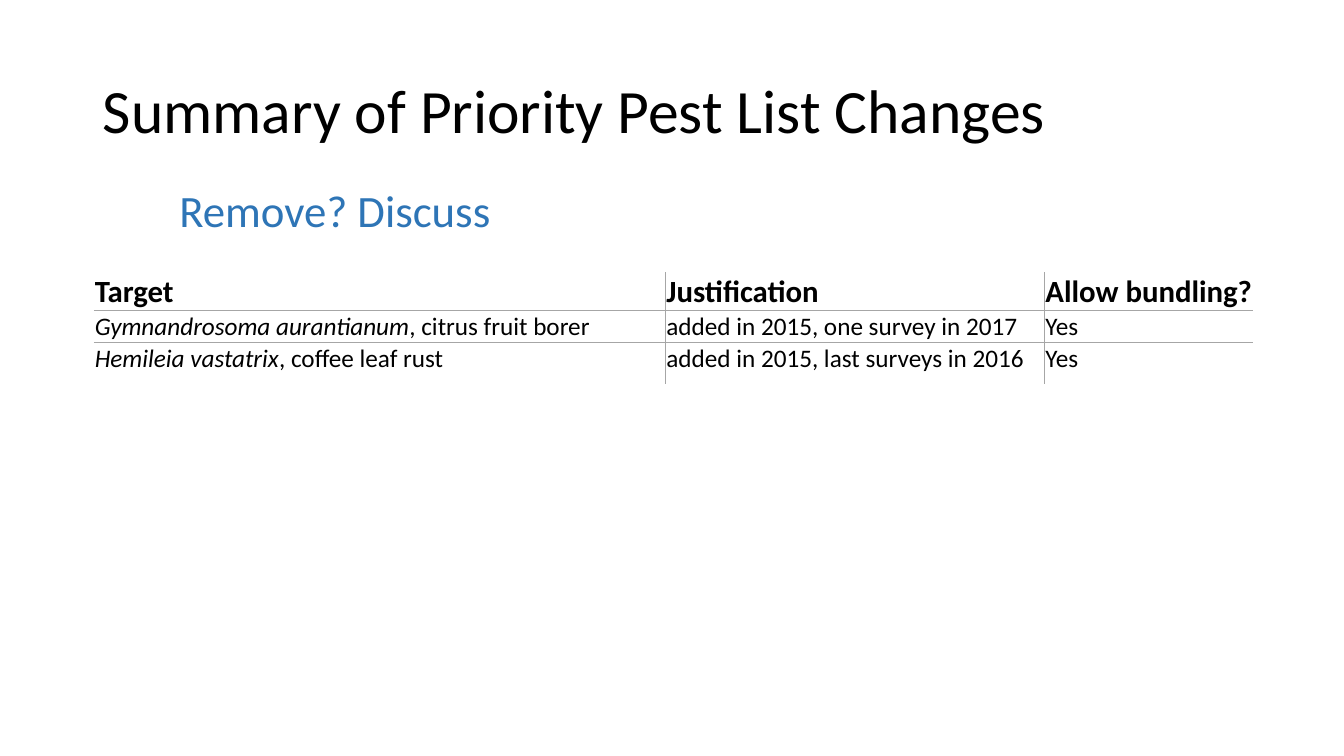
from lxml import etree
from pptx import Presentation
from pptx.dml.color import RGBColor
from pptx.enum.text import MSO_ANCHOR, MSO_AUTO_SIZE, PP_ALIGN
from pptx.oxml.ns import qn
from pptx.util import Inches, Pt

TOP, MIDDLE, BOTTOM = MSO_ANCHOR.TOP, MSO_ANCHOR.MIDDLE, MSO_ANCHOR.BOTTOM
LEFT = PP_ALIGN.LEFT
GROW = MSO_AUTO_SIZE.SHAPE_TO_FIT_TEXT

# Content: each cell is a list of (text, italic) pieces
TITLE = "Summary of Priority Pest List Changes"
SUBTITLE = "Remove? Discuss"
PESTS = [
    [[("Target", False)], [("Justification", False)], [("Allow bundling?", False)]],
    [[("Gymnandrosoma aurantianum", True), (", citrus fruit borer", False)],
     [("added in 2015, one survey in 2017", False)], [("Yes", False)]],
    [[("Hemileia vastatrix", True), (", coffee leaf rust", False)],
     [("added in 2015, last surveys in 2016", False)], [("Yes", False)]],
]

# Look and layout, in inches
FONT = "Calibri"
COLORS = {"text": "000000", "accent": "2E75B6", "rule": "A6A6A6"}
SLIDE = (13.33, 7.5)
TITLE_AREA = (0.92, 0.4, 11.5, 1.45)
SUBTITLE_AREA = (1.68, 1.76, 7.59, 0.64)
TABLE_CORNER = (0.93, 2.7)
COLUMNS = (5.67, 3.76, 2.07)
ROWS = (0.38, 0.31, 0.41)


def style(para, size, color="text", bold=False):
    para.font.name = FONT
    para.font.size = Pt(size)
    para.font.bold = bold
    para.font.color.rgb = RGBColor.from_string(COLORS[color])


def add_border(cell, side, visible):
    line = etree.SubElement(cell._tc.get_or_add_tcPr(), qn(f"a:ln{side}"), w=str(Pt(1)))
    if visible:
        fill = etree.SubElement(line, qn("a:solidFill"))
        etree.SubElement(fill, qn("a:srgbClr"), val=COLORS["rule"])
    else:
        etree.SubElement(line, qn("a:noFill"))


def fill_cell(cell, pieces, row, column):
    # Rules run only between cells, never round the outside
    inner = {"L": column > 0, "R": column < len(COLUMNS) - 1,
             "T": row > 0, "B": row < len(ROWS) - 1}
    for side, visible in inner.items():
        add_border(cell, side, visible)
    cell.fill.background()
    cell.margin_left = cell.margin_top = cell.margin_right = Inches(0.01)
    cell.margin_bottom = 0
    header = row == 0
    cell.vertical_anchor = BOTTOM if header else TOP
    para = cell.text_frame.paragraphs[0]
    style(para, 22 if header else 18, bold=header)
    for text, italic in pieces:
        span = para.add_run()
        span.text = text
        span.font.italic = italic


def main():
    deck = Presentation()
    deck.slide_width, deck.slide_height = map(Inches, SLIDE)
    page = deck.slides.add_slide(deck.slide_layouts.get_by_name("Title Only"))

    # Title
    title = page.shapes.title
    title.left, title.top, title.width, title.height = map(Inches, TITLE_AREA)
    title.text_frame.text = TITLE
    title.text_frame.vertical_anchor = MIDDLE
    para = title.text_frame.paragraphs[0]
    para.alignment = LEFT
    para.line_spacing = 0.9
    style(para, 44)

    # Pest table
    frame = page.shapes.add_table(len(ROWS), len(COLUMNS), *map(Inches, TABLE_CORNER),
                                  Inches(sum(COLUMNS)), Inches(sum(ROWS)))
    table = frame.table
    table.horz_banding = False
    for column, width in enumerate(COLUMNS):
        table.columns[column].width = Inches(width)
    for row, height in enumerate(ROWS):
        table.rows[row].height = Inches(height)
        for column, pieces in enumerate(PESTS[row]):
            fill_cell(table.cell(row, column), pieces, row, column)

    # Subtitle
    box = page.shapes.add_textbox(*map(Inches, SUBTITLE_AREA))
    box.text_frame.word_wrap = True
    box.text_frame.auto_size = GROW
    box.text_frame.text = SUBTITLE
    style(box.text_frame.paragraphs[0], 32, "accent")

    deck.save("out.pptx")


if __name__ == "__main__":
    main()
